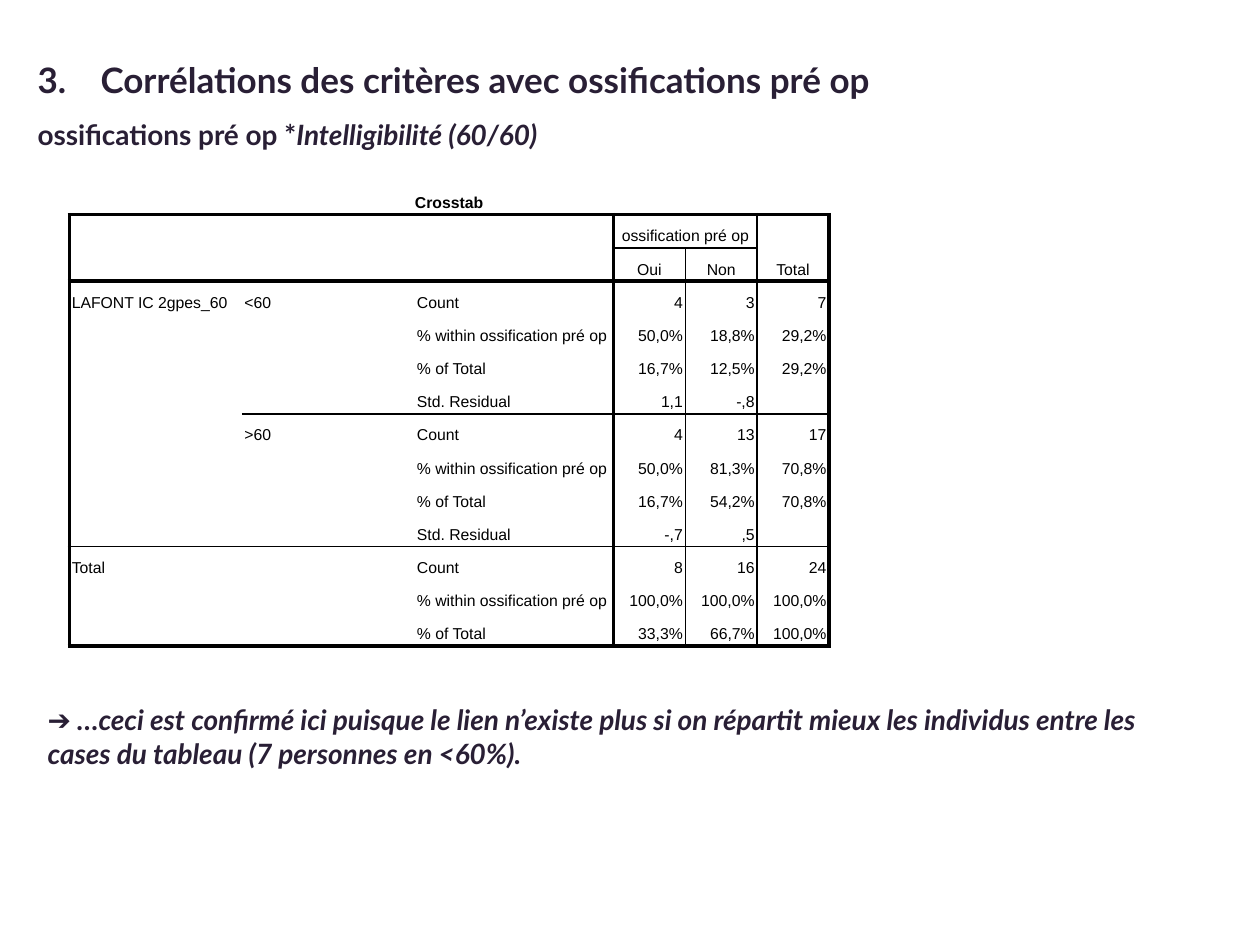
from pptx import Presentation
from pptx.dml.color import RGBColor
from pptx.enum import text as t
from pptx.oxml.ns import qn
from pptx.util import Inches, Pt
from lxml import etree

INK = RGBColor(0x29, 0x1F, 0x35)
BLACK = RGBColor(0, 0, 0)
WHITE = RGBColor(0xFF, 0xFF, 0xFF)
THICK, THIN = 2.25, 1

WIDTHS = [1.37, 1.37, 1.58, 0.57, 0.57, 0.57]
WITHIN = "% within ossification pré op"
ROWS = [
    ["Crosstab", "", "", "", "", ""],
    ["", "", "", "ossification pré op", "", "Total"],
    ["", "", "", "Oui", "Non", ""],
    ["LAFONT IC 2gpes_60", "<60", "Count", "4", "3", "7"],
    ["", "", WITHIN, "50,0%", "18,8%", "29,2%"],
    ["", "", "% of Total", "16,7%", "12,5%", "29,2%"],
    ["", "", "Std. Residual", "1,1", "-,8", ""],
    ["", ">60", "Count", "4", "13", "17"],
    ["", "", WITHIN, "50,0%", "81,3%", "70,8%"],
    ["", "", "% of Total", "16,7%", "54,2%", "70,8%"],
    ["", "", "Std. Residual", "-,7", ",5", ""],
    ["Total", "", "Count", "8", "16", "24"],
    ["", "", WITHIN, "100,0%", "100,0%", "100,0%"],
    ["", "", "% of Total", "33,3%", "66,7%", "100,0%"],
]
# First row, first column, last row, last column
SPANS = [(0, 0, 0, 5), (1, 3, 1, 4), (1, 5, 2, 5), (3, 0, 10, 0),
         (3, 1, 6, 1), (7, 1, 10, 1), (11, 0, 13, 1)]


def style(run, name, size, color, bold=False, italic=False):
    font = run.font
    font.name, font.size = name, Pt(size)
    font.bold, font.italic = bold, italic
    font.color.rgb = color


def add_box(slide, left, top, width, height):
    frame = slide.shapes.add_textbox(
        Inches(left), Inches(top), Inches(width), Inches(height)).text_frame
    frame.word_wrap = True
    return frame


def add_title(slide, left, top, width, height):
    frame = add_box(slide, left, top, width, height)
    lines = [
        (20, [("3.\tCorrélations des critères avec ossifications pré op", False)]),
        (16, [("ossifications pré op *", False),
              ("Intelligibilité (60/60)", True)]),
    ]
    for i, (size, parts) in enumerate(lines):
        para = frame.paragraphs[0] if i == 0 else frame.add_paragraph()
        para.line_spacing = 1.5
        props = para._p.get_or_add_pPr()
        props.set("marL", str(Inches(0.5)))
        props.set("indent", str(Inches(-0.5)))
        for words, italic in parts:
            run = para.add_run()
            run.text = words
            style(run, "Lato", size, INK, True, italic)


def row_edge(edge, col):
    """Width of the rule above row number edge."""
    if edge in (1, 3, 14):
        return THICK
    first, last = {2: (3, 4), 7: (1, 5), 11: (0, 5)}.get(edge, (9, 9))
    return THIN if first <= col <= last else 0


def col_edge(edge, row):
    """Width of the rule left of column number edge."""
    if row == 0 or (row, edge) == (1, 4):
        return 0
    return {0: THICK, 3: THICK, 4: THIN, 5: THIN, 6: THICK}.get(edge, 0)


def add_rule(cell, side, width):
    line = etree.SubElement(cell._tc.get_or_add_tcPr(), qn("a:ln" + side))
    if not width:
        etree.SubElement(line, qn("a:noFill"))
        return
    line.set("w", str(Pt(width)))
    fill = etree.SubElement(line, qn("a:solidFill"))
    etree.SubElement(fill, qn("a:srgbClr")).set("val", str(BLACK))


def set_cell(cell, row, col, words):
    cell.margin_left = cell.margin_right = Inches(0.02)
    cell.margin_top = cell.margin_bottom = Inches(0.02)
    anchor = t.MSO_ANCHOR
    cell.vertical_anchor = (anchor.MIDDLE if row == 0 else
                            anchor.BOTTOM if row < 3 else anchor.TOP)
    # Text
    cell.text_frame.text = words
    para = cell.text_frame.paragraphs[0]
    para.line_spacing = Pt(16)
    align = t.PP_ALIGN
    para.alignment = (align.CENTER if row < 3 else
                      align.RIGHT if col > 2 else align.LEFT)
    for run in para.runs:
        style(run, "Arial", 9, BLACK, row == 0)
    # Small type keeps empty cells from stretching their row
    etree.SubElement(para._p, qn("a:endParaRPr")).set("sz", "900")
    # Rules and fill
    end_row, end_col = row + 1, col + 1
    if cell.is_merge_origin:
        end_row, end_col = row + cell.span_height, col + cell.span_width
    add_rule(cell, "L", col_edge(col, row))
    add_rule(cell, "R", col_edge(end_col, row))
    add_rule(cell, "T", row_edge(row, col))
    add_rule(cell, "B", row_edge(end_row, col))
    cell.fill.solid()
    cell.fill.fore_color.rgb = WHITE


def add_crosstab(slide, left, top, height):
    table = slide.shapes.add_table(
        len(ROWS), len(WIDTHS), Inches(left), Inches(top),
        Inches(sum(WIDTHS)), Inches(height)).table
    table.first_row = table.horz_banding = False
    for col, width in zip(table.columns, WIDTHS):
        col.width = Inches(width)
    for r1, c1, r2, c2 in SPANS:
        table.cell(r1, c1).merge(table.cell(r2, c2))
    for r, line in enumerate(ROWS):
        for c, words in enumerate(line):
            set_cell(table.cell(r, c), r, c, words)


def add_note(slide, left, top, width, height):
    frame = add_box(slide, left, top, width, height)
    frame.text = ("➔ …ceci est confirmé ici puisque le lien n’existe plus si on "
                  "répartit mieux les individus entre les cases du tableau "
                  "(7 personnes en <60%).")
    style(frame.paragraphs[0].runs[0], "Lato", 16, INK, True, True)


def main():
    deck = Presentation()
    deck.slide_width, deck.slide_height = Inches(10), Inches(7.5)
    slide = deck.slides.add_slide(deck.slide_layouts[6])
    add_title(slide, 0.2, 0.25, 8.63, 1.51)
    add_crosstab(slide, 0.55, 1.44, 3.69)
    add_note(slide, 0.28, 5.53, 9.13, 0.64)
    deck.save("out.pptx")


if __name__ == "__main__":
    main()
